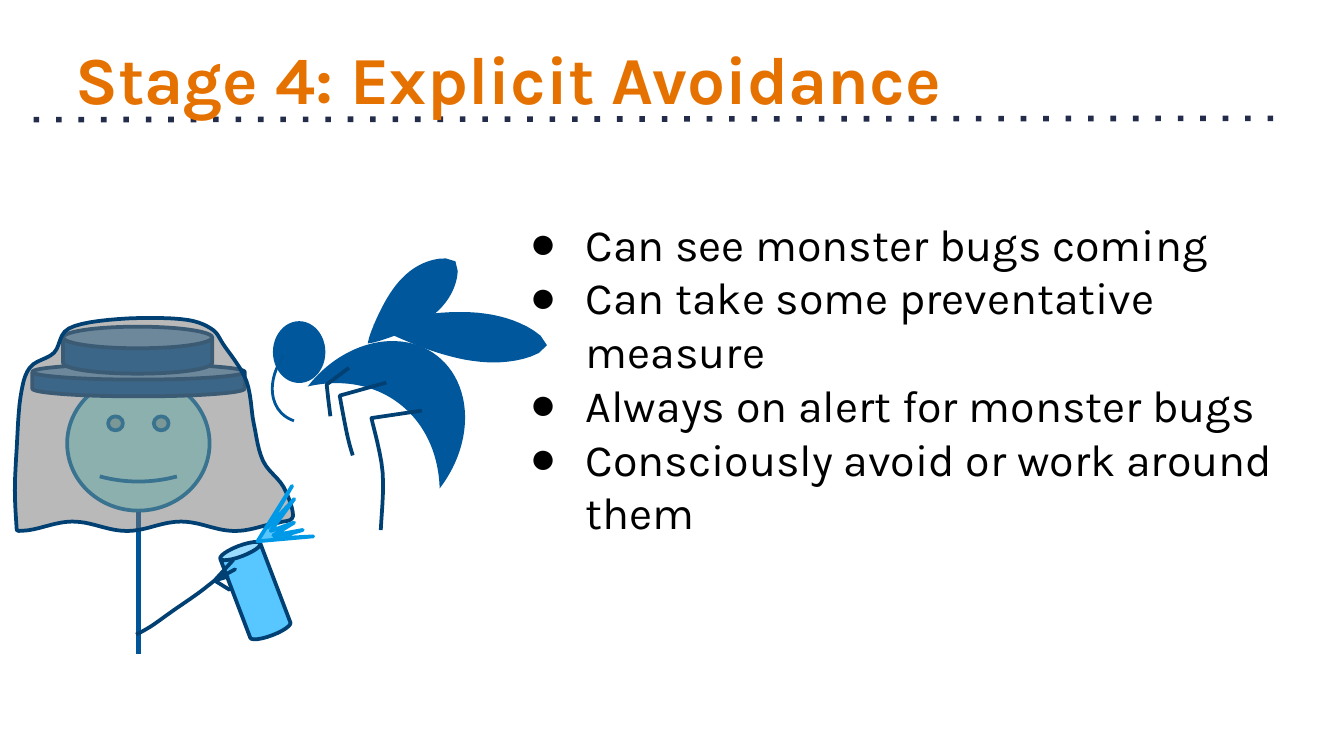
from math import cos, hypot, pi, radians, sin

from lxml.etree import SubElement
from pptx import Presentation
from pptx.dml.color import RGBColor
from pptx.enum.shapes import MSO_CONNECTOR as Connector, MSO_SHAPE as Preset
from pptx.enum.text import MSO_ANCHOR as Anchor, MSO_AUTO_SIZE as AutoSize, PP_ALIGN as Align
from pptx.oxml.ns import qn
from pptx.util import Pt

BULLETS = [
    "Can see monster bugs coming",
    "Can take some preventative measure",
    "Always on alert for monster bugs",
    "Consciously avoid or work around them",
]


def color(value):
    return RGBColor.from_string(value)


def curve(anchors, steps=6):
    """Points of a smooth Catmull-Rom curve through the anchors."""
    padded = [anchors[0], *anchors, anchors[-1]]
    points = [anchors[0]]
    for before, start, end, after in zip(padded, padded[1:], padded[2:], padded[3:]):
        for step in range(1, steps + 1):
            t = step / steps
            points.append(tuple(
                b + ((c - a) * t + (2 * a - 5 * b + 4 * c - d) * t**2
                     + (3 * b - a - 3 * c + d) * t**3) / 2
                for a, b, c, d in zip(before, start, end, after)))
    return points


def wing(base, tip, half_width, steps=24):
    """Outline of a leaf around the base-tip axis, fuller towards the tip."""
    across, down = tip[0] - base[0], tip[1] - base[1]
    length = hypot(across, down)
    edges = {1: [], -1: []}
    for side, edge in edges.items():
        for step in range(steps + 1):
            t = step / steps
            reach = side * half_width * max(0, sin(pi * t**1.4)) ** 0.6 / length
            edge.append((base[0] + across * t + down * reach,
                         base[1] + down * t - across * reach))
    return edges[1] + edges[-1][::-1]


def veil():
    """Outline of the veil: a wavy hem, then up the right side and down the left."""
    left, right, level, swing, period = 10, 155, 282, 2.5, 58
    hem = [(x, level + swing * cos(2 * pi * (x - left) / period))
           for x in range(left, right, 5)]
    right_side = [(157, 276.5), (152, 261), (141, 247), (136, 227), (132, 204), (120, 185)]
    crown = [(113, 176), (97, 171), (63, 171), (37, 176)]
    left_side = [(29, 189), (16, 197), (11, 213), (9, 240), (8, 263), (9, 284)]
    return curve(hem + right_side + crown + left_side)


def spray(nozzle, rays, notch=9):
    """Outline of a fan of jets, each an angle above the horizontal and a reach."""
    def polar(angle, reach):
        return (nozzle[0] + reach * cos(radians(angle)),
                nozzle[1] - reach * sin(radians(angle)))

    points = [nozzle]
    for (angle, reach), following in zip(rays, rays[1:] + [None]):
        points.append(polar(angle, reach))
        if following:
            points.append(polar((angle + following[0]) / 2, notch))
    return points


class Deck:
    font, marker_font = "Karla", "Arial"
    orange, navy, black = "E57200", "232D4B", "000000"
    blue, ink, stroke = "01579B", "014073", "005599"
    skin, skin_edge, gauze, can, mist = "A4EDE9", "0071AC", "757575", "58C6FF", "0099E8"

    def __init__(self):
        self.file = Presentation()
        self.file.slide_width, self.file.slide_height = Pt(720), Pt(405)
        self.page = self.file.slides.add_slide(self.file.slide_layouts[5])
        self.shapes = self.page.shapes

    def group(self):
        """Send the following shapes into a new group."""
        self.shapes = self.page.shapes.add_group_shape().shapes

    def ungroup(self):
        self.shapes = self.page.shapes

    def frame(self, box):
        frame = box.text_frame
        frame.word_wrap, frame.auto_size = True, AutoSize.NONE
        frame.vertical_anchor = Anchor.TOP
        frame.margin_left = frame.margin_right = Pt(7.2)
        frame.margin_top = frame.margin_bottom = Pt(7.2)
        return frame

    def span(self, para, text, size, fill, bold=False):
        span = para.add_run()
        span.text = text
        span.font.name, span.font.size, span.font.bold = self.font, Pt(size), bold
        span.font.color.rgb = color(fill)

    def title(self, text, left, top, width, height):
        box = self.page.shapes.title
        box.left, box.top, box.width, box.height = map(Pt, (left, top, width, height))
        para = self.frame(box).paragraphs[0]
        para.alignment = Align.LEFT
        self.span(para, text, 36, self.orange, bold=True)

    def bullets(self, items, left, top, width, height):
        frame = self.frame(self.shapes.add_textbox(*map(Pt, (left, top, width, height))))
        for index, item in enumerate(items):
            para = frame.add_paragraph() if index else frame.paragraphs[0]
            props = para._p.get_or_add_pPr()
            props.set("marL", str(Pt(36)))
            props.set("indent", str(-Pt(30)))
            tint = SubElement(props, qn("a:buClr"))
            SubElement(tint, qn("a:srgbClr"), val=self.black)
            SubElement(props, qn("a:buFont"), typeface=self.marker_font)
            SubElement(props, qn("a:buChar"), char="●")
            self.span(para, item, 24, self.black)

    def paint(self, shape, fill, line, weight, alpha=None):
        shape.shadow.inherit = False
        if fill:
            shape.fill.solid()
            shape.fill.fore_color.rgb = color(fill)
            if alpha:
                tint = shape.element.spPr.find(f"{qn('a:solidFill')}/{qn('a:srgbClr')}")
                SubElement(tint, qn("a:alpha"), val=str(alpha * 1000))
        else:
            shape.fill.background()
        if line:
            shape.line.color.rgb, shape.line.width = color(line), Pt(weight)
            SubElement(shape.element.spPr.find(qn("a:ln")), qn("a:round"))
        else:
            shape.line.fill.background()

    def preset(self, kind, bounds, fill=None, line=None, weight=2, turn=0, adjust=()):
        shape = self.shapes.add_shape(kind, *map(Pt, bounds))
        shape.rotation = turn
        for index, value in enumerate(adjust):
            shape.adjustments[index] = value
        self.paint(shape, fill, line, weight)

    def outline(self, points, fill=None, line=None, alpha=None):
        """Draw a freeform, closed when it has a fill."""
        start, *rest = [(Pt(x), Pt(y)) for x, y in points]
        builder = self.shapes.build_freeform(*start)
        builder.add_line_segments(rest, close=bool(fill))
        self.paint(builder.convert_to_shape(), fill, line, 2, alpha)

    def line(self, start, end, stroke, dash=None):
        line = self.shapes.add_connector(Connector.STRAIGHT, *map(Pt, (*start, *end)))
        line.line.color.rgb, line.line.width = color(stroke), Pt(3)
        props = line.element.spPr
        if dash:
            SubElement(props.find(qn("a:ln")), qn("a:prstDash"), val=dash)
        SubElement(props, qn("a:effectLst"))
        return line


def draw_bug(deck):
    deck.group()
    body, head, feeler = (189.4, 167.8, 55.4, 89.3), (146.2, 172.1, 28.1, 33.1), (150.5, 169.9, 43.9, 60.5)
    deck.preset(Preset.MOON, body, deck.blue, turn=127.7, adjust=[0.59])
    deck.preset(Preset.OVAL, head, deck.blue)
    deck.preset(Preset.ARC, feeler, None, deck.stroke, 1.5, 225.9, [152.85, 204.29])
    deck.outline(wing(base=(197, 184), tip=(244, 140), half_width=13), deck.blue)
    deck.outline(wing(base=(200, 174), tip=(293, 185), half_width=13), deck.blue)
    for hip, knee, shin, foot in [
        [(226, 220), (199, 224), (205, 253), (204, 284)],
        [(207, 205), (182, 212), (186, 233), (189, 244)],
        [(187, 197), (175, 206), (176, 215), (177, 223)],
    ]:
        deck.outline([hip, *curve([knee, shin, foot])], line=deck.ink)
    deck.ungroup()


def draw_person(deck):
    deck.line((74.2, 274.3), (74.2, 350.6), deck.stroke)
    brim, crown = (17.3, 195.1, 113.8, 17.3), (33.8, 175, 79.9, 25.2)
    for bounds, depth in [(brim, 0.48), (crown, 0.46)]:
        deck.preset(Preset.CAN, bounds, deck.blue, deck.ink, adjust=[depth])
    deck.outline(veil(), deck.gauze, deck.ink, alpha=50)
    deck.preset(Preset.CAN, (125.3, 290.9, 23, 51.1), deck.can, deck.ink, turn=339.2)

    palm = (115, 311)
    arm = curve([(73, 340), (81, 335.5), (93, 327), (106, 318), palm])
    for fingertip in [(125, 300), (126, 305), (122, 309), (123, 316)]:
        arm += [fingertip, palm]
    deck.outline(arm, line=deck.ink)
    rays = [(58, 35), (49, 30), (27, 22), (14, 25), (5, 30)]
    deck.outline(spray((138, 290), rays), deck.can, deck.mist)


def main():
    deck = Deck()
    rule = deck.line((18, 64.1), (687.6, 63.4), deck.navy, dash="dot")
    deck.page.shapes.title.element.addprevious(rule.element)
    deck.title("Stage 4: Explicit Avoidance", 33.1, 13, 654.5, 49.7)
    deck.bullets(BULLETS, 270.7, 108.7, 446.4, 129.6)
    face = (36, 201.6, 76.3, 72)
    deck.preset(Preset.SMILEY_FACE, face, deck.skin, deck.skin_edge, adjust=[0.019])
    draw_bug(deck)
    draw_person(deck)
    deck.file.save("out.pptx")


if __name__ == "__main__":
    main()
